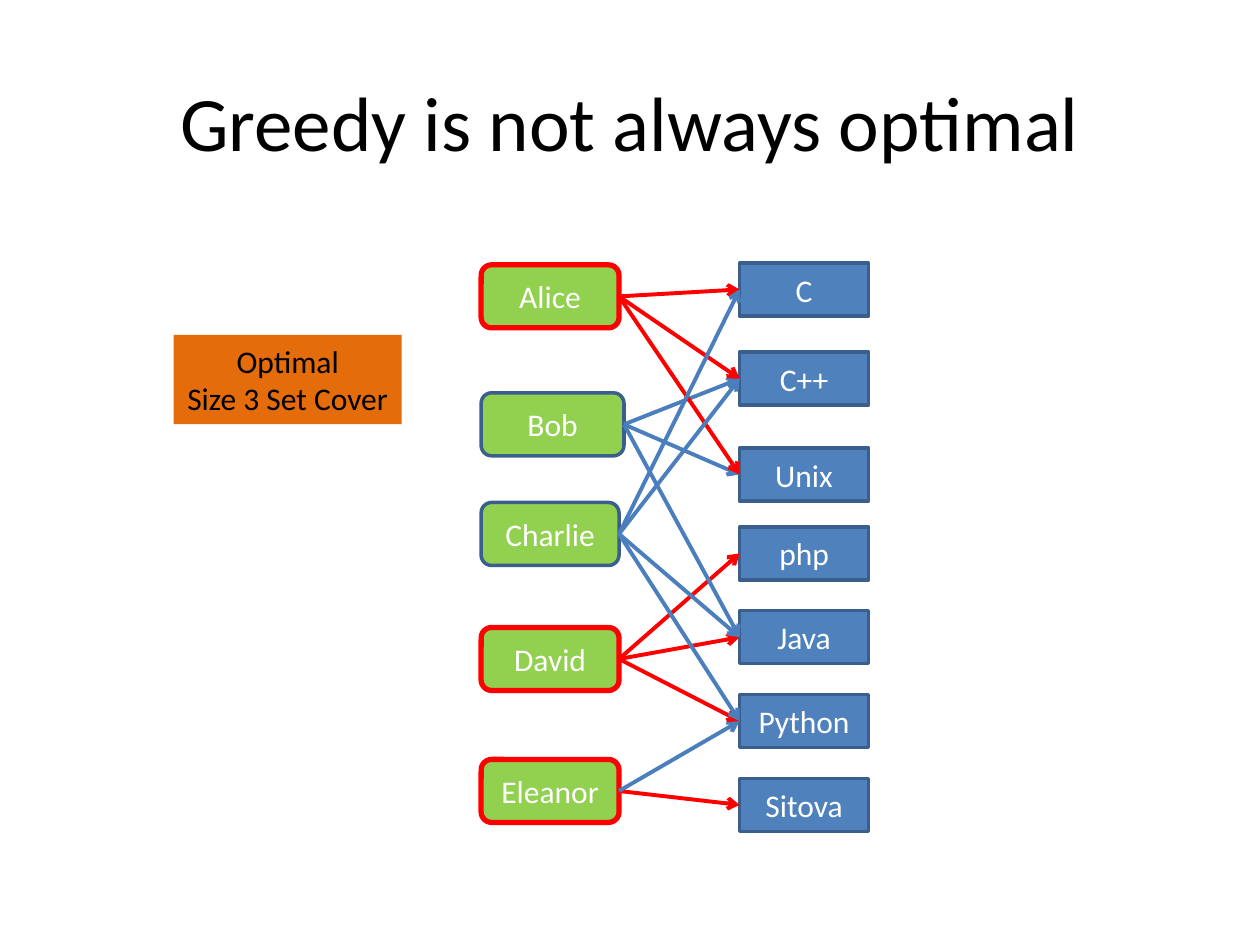
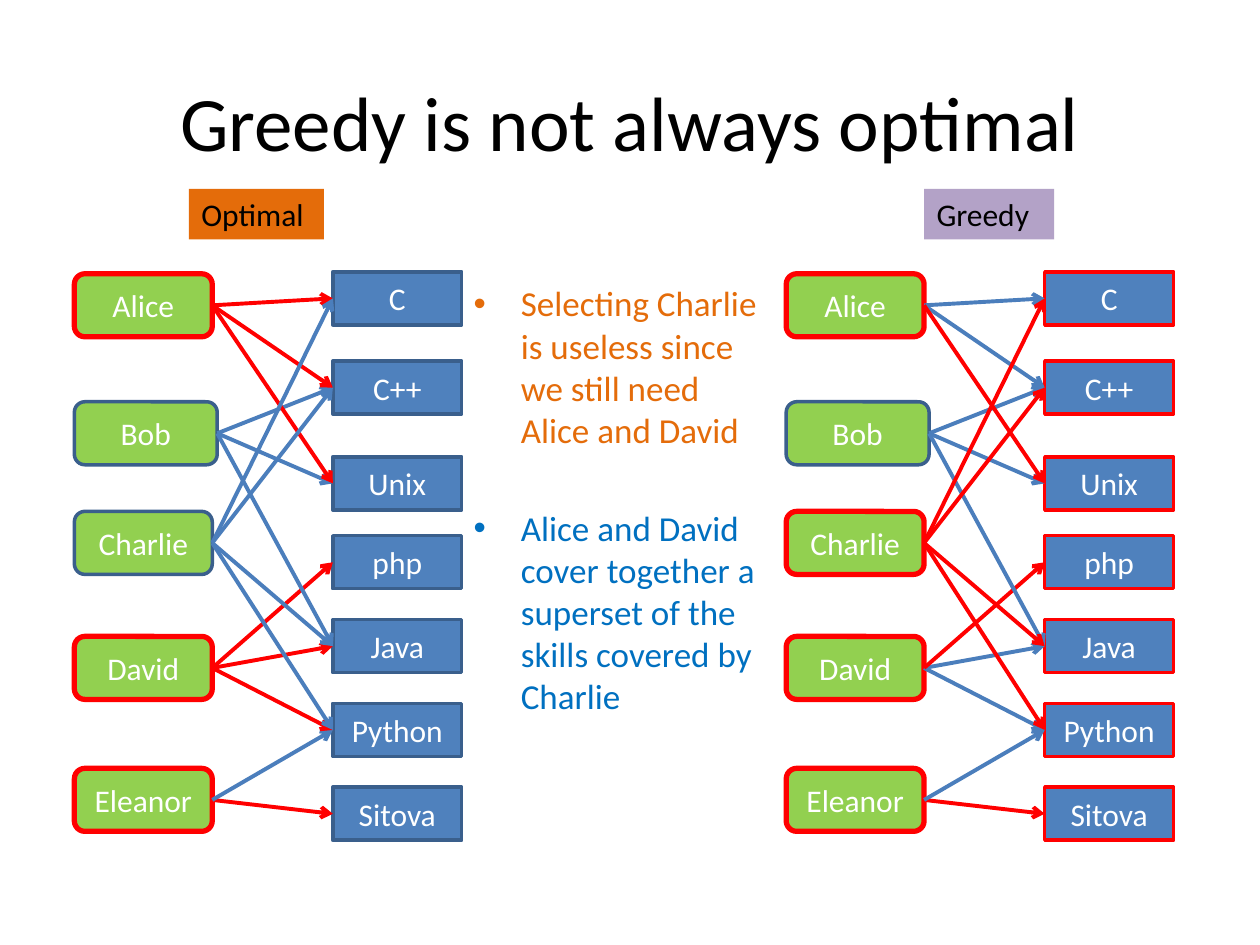
from lxml import etree
from pptx import Presentation
from pptx.dml.color import RGBColor
from pptx.enum.shapes import MSO_CONNECTOR as Conn, MSO_SHAPE as Geo
from pptx.enum.text import MSO_ANCHOR as Anchor, PP_ALIGN as Align
from pptx.oxml.ns import qn
from pptx.util import Cm, Pt

FONT = "Calibri"
COLOURS = {
    "black": "000000", "white": "FFFFFF", "red": "FF0000",
    "skill": "4F81BD", "person": "92D050", "outline": "3A5F8C",
    "link": "4B7EBC", "optimal": "E46C0A", "greedy": "B3A2C7",
    "note": "0070C0",
}

# Diagram geometry in cm, relative to the top left of its box
SKILL_LEFT, SKILL_W, SKILL_H = 5.21, 2.6, 1.07
PERSON_H = 1.27
PHP_TOP, SKILL_STEP = 5.32, 1.69
SKILLS = {"C": 0, "C++": 1.8, "Unix": 3.73}
SKILLS.update((name, PHP_TOP + i * SKILL_STEP)
              for i, name in enumerate(["php", "Java", "Python", "Sitova"]))

# Person: top, width
PEOPLE = {
    "Alice": (0.04, 2.78), "Bob": (2.62, 2.88), "Charlie": (4.83, 2.78),
    "David": (7.35, 2.78), "Eleanor": (10.01, 2.78),
}
KNOWS = {
    "Eleanor": ["Sitova", "Python"],
    "David": ["Java", "Python", "php"],
    "Bob": ["Unix", "Java", "C++"],
    "Alice": ["C", "C++", "Unix"],
    "Charlie": ["C", "C++", "Python", "Java"],
}

# Skills that each chosen person is credited with
OPTIMAL = {"Alice": KNOWS["Alice"], "David": KNOWS["David"],
           "Eleanor": ["Sitova"]}
GREEDY = {"Charlie": KNOWS["Charlie"], "Alice": ["Unix"],
          "David": ["php"], "Eleanor": ["Sitova"]}


def rgb(name):
    return RGBColor.from_string(COLOURS[name])


def add_run(p, text, size, colour):
    r = p.add_run()
    r.text = text
    r.font.name = FONT
    r.font.size = Pt(size)
    r.font.color.rgb = rgb(colour)


def add_box(slide, geo, box, fill, lines, colour="white", align=Align.CENTER):
    sp = slide.shapes.add_shape(geo, *(Cm(v) for v in box))
    sp.shadow.inherit = False
    sp.fill.solid()
    sp.fill.fore_color.rgb = rgb(fill)
    sp.line.fill.background()
    tf = sp.text_frame
    tf.vertical_anchor = Anchor.MIDDLE
    for i, line in enumerate(lines):
        p = tf.add_paragraph() if i else tf.paragraphs[0]
        p.alignment = align
        add_run(p, line, 18, colour)
    return sp


def outline(sp, colour, width):
    sp.line.color.rgb = rgb(colour)
    sp.line.width = Pt(width)


def add_arrow(slide, person, skill, colour):
    arrow = slide.shapes.add_connector(Conn.STRAIGHT, 0, 0, 0, 0)
    arrow.begin_connect(person, 3)
    arrow.end_connect(skill, 1)
    outline(arrow, colour, 2.25)
    spPr = arrow._element.spPr
    etree.SubElement(spPr.find(qn("a:ln")), qn("a:tailEnd"), type="arrow")
    etree.SubElement(spPr, qn("a:effectLst"))


def add_cover(slide, left, top, cover, skill_line="outline"):
    """People, skills and the links between them; the cover is red."""
    skills, people = {}, {}
    for name, dy in SKILLS.items():
        box = (left + SKILL_LEFT, top + dy, SKILL_W, SKILL_H)
        skills[name] = add_box(slide, Geo.RECTANGLE, box, "skill", [name])
        outline(skills[name], skill_line, 2)
    for name, (dy, width) in PEOPLE.items():
        box = (left, top + dy, width, PERSON_H)
        people[name] = add_box(slide, Geo.ROUNDED_RECTANGLE, box, "person", [name])
        outline(people[name], *(("red", 3) if name in cover else ("outline", 2)))
    for name, known in KNOWS.items():
        for skill in known:
            colour = "red" if skill in cover.get(name, []) else "link"
            add_arrow(slide, people[name], skills[skill], colour)


def add_label(slide, box, fill, lines, align=Align.LEFT):
    sp = add_box(slide, Geo.RECTANGLE, box, fill, lines, "black", align)
    sp.text_frame.word_wrap = align == Align.LEFT


def add_notes_column(slide, box, notes):
    tf = slide.shapes.add_textbox(*(Cm(v) for v in box)).text_frame
    tf.word_wrap = True
    for i, (text, colour) in enumerate(notes):
        p = tf.add_paragraph() if i else tf.paragraphs[0]
        p.space_before = Pt(32 if i else 0)
        add_run(p, text, 20, colour)
        pPr = p._p.get_or_add_pPr()
        pPr.set("marL", str(Cm(0.95)))
        pPr.set("indent", str(-Cm(0.95)))
        etree.SubElement(pPr, qn("a:buFont"), typeface="Arial")
        etree.SubElement(pPr, qn("a:buChar"), char="•")


def add_titled_slide(prs):
    slide = prs.slides.add_slide(prs.slide_layouts[5])
    title = slide.shapes.title
    title.left, title.top, title.width, title.height = (
        Cm(v) for v in (1.27, 1.07, 22.86, 2.74))
    tf = title.text_frame
    tf.vertical_anchor = Anchor.MIDDLE
    p = tf.paragraphs[0]
    p.alignment = Align.CENTER
    add_run(p, "Greedy is not always optimal", 44, "black")
    return slide


def optimal_slide(prs):
    slide = add_titled_slide(prs)
    add_cover(slide, 9.7, 5.3, OPTIMAL)
    add_label(slide, (3.5, 6.75, 4.6, 1.8), "optimal",
              ["Optimal", "Size 3 Set Cover"], Align.CENTER)


def comparison_slide(prs):
    slide = add_titled_slide(prs)
    # Optimal cover on the left
    add_cover(slide, 1.5, 5.48, OPTIMAL)
    add_label(slide, (3.81, 3.81, 2.72, 1.02), "optimal", ["Optimal"])
    # Greedy cover on the right
    add_cover(slide, 15.85, 5.48, GREEDY, "red")
    add_label(slide, (18.63, 3.81, 2.62, 1.02), "greedy", ["Greedy"])
    # Explanation between the two
    add_notes_column(slide, (9.3, 5.56, 6.55, 11.1), [
        ("Selecting Charlie is useless since we still need Alice and David",
         "optimal"),
        ("Alice and David cover together a superset of the skills covered "
         "by Charlie", "note"),
    ])


def main():
    prs = Presentation()
    prs.slide_width, prs.slide_height = Cm(25.4), Cm(19.05)
    optimal_slide(prs)
    comparison_slide(prs)
    prs.save("out.pptx")


if __name__ == "__main__":
    main()
